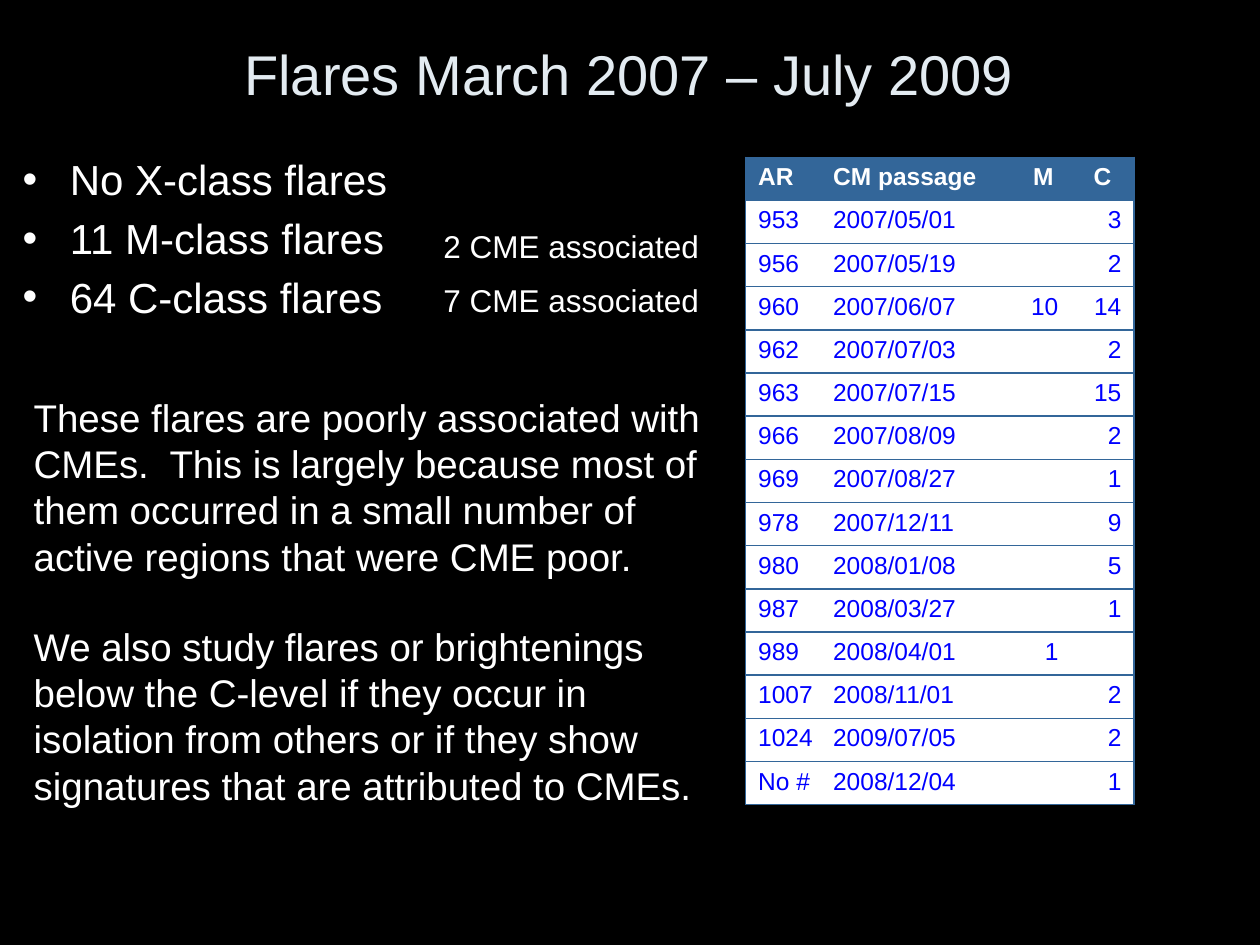
from lxml.etree import SubElement
from pptx import Presentation
from pptx.dml.color import RGBColor
from pptx.enum.text import MSO_ANCHOR as Anchor, MSO_AUTO_SIZE as AutoSize, PP_ALIGN as Align
from pptx.oxml.ns import qn
from pptx.util import Cm, Pt

COLORS = {
    "background": "000000",
    "title": "E3EBF1",
    "text": "FFFFFF",
    "header": "336699",
    "cell": "FFFFFF",
    "data": "0000FF",
}
FONT = "Arial"


def write(paragraph, text, size=18, color="text", bold=False, align=None, before=None):
    """Put formatted text in a paragraph."""
    if align is not None:
        paragraph.alignment = align
    if before is not None:
        paragraph.space_before = Pt(before)
    if not text:
        # An empty cell still needs its text size to keep the row height
        paragraph._p.get_or_add_endParaRPr().set("sz", str(size * 100))
        return
    run = paragraph.add_run()
    run.text = text
    run.font.name = FONT
    run.font.size = Pt(size)
    run.font.bold = bold
    run.font.color.rgb = RGBColor.from_string(COLORS[color])


class SlideBuilder:
    def __init__(self, slide):
        self.slide = slide
        fill = slide.background.fill
        fill.solid()
        fill.fore_color.rgb = RGBColor.from_string(COLORS["background"])

    def fill_frame(self, frame, lines, **style):
        frame.word_wrap = True
        for i, line in enumerate(lines):
            paragraph = frame.add_paragraph() if i else frame.paragraphs[0]
            write(paragraph, line, **style)

    def placeholder(self, index, box, lines, **style):
        holder = self.slide.placeholders[index]
        holder.left, holder.top, holder.width, holder.height = map(Cm, box)
        holder.text_frame.auto_size = AutoSize.NONE
        self.fill_frame(holder.text_frame, lines, **style)

    def text(self, box, lines, anchor=Anchor.TOP, **style):
        frame = self.slide.shapes.add_textbox(*map(Cm, box)).text_frame
        frame.vertical_anchor = anchor
        self.fill_frame(frame, lines, **style)

    def border(self, cell, side, visible):
        line = SubElement(cell._tc.get_or_add_tcPr(), qn(f"a:ln{side}"), w=str(Pt(1)))
        if visible:
            solid = SubElement(line, qn("a:solidFill"))
            SubElement(solid, qn("a:srgbClr"), val=COLORS["header"])
        else:
            SubElement(line, qn("a:noFill"))

    def table(self, left, top, widths, row_height, rows, tab):
        size = sum(widths), row_height * len(rows)
        table = self.slide.shapes.add_table(
            len(rows), len(widths), *map(Cm, (left, top, *size))).table
        for column, width in zip(table.columns, widths):
            column.width = Cm(width)
        last = len(widths) - 1
        for r, values in enumerate(rows):
            table.rows[r].height = Cm(row_height)
            header = r == 0
            for c, value in enumerate(values):
                cell = table.cell(r, c)
                for side, visible in (("L", c == 0), ("R", c == last), ("T", True), ("B", True)):
                    self.border(cell, side, visible)
                cell.fill.solid()
                cell.fill.fore_color.rgb = RGBColor.from_string(
                    COLORS["header" if header else "cell"])
                paragraph = cell.text_frame.paragraphs[0]
                if c == 0:
                    align = Align.LEFT
                    stops = SubElement(paragraph._p.get_or_add_pPr(), qn("a:tabLst"))
                    SubElement(stops, qn("a:tab"), pos=str(Cm(tab)), algn="l")
                else:
                    align = Align.CENTER if header else Align.RIGHT
                write(paragraph, value, size=14, bold=header, align=align,
                      color="text" if header else "data")


FLARES = [
    ("AR", "CM passage", "M", "C"),
    ("953", "2007/05/01", "", "3"),
    ("956", "2007/05/19", "", "2"),
    ("960", "2007/06/07", "10", "14"),
    ("962", "2007/07/03", "", "2"),
    ("963", "2007/07/15", "", "15"),
    ("966", "2007/08/09", "", "2"),
    ("969", "2007/08/27", "", "1"),
    ("978", "2007/12/11", "", "9"),
    ("980", "2008/01/08", "", "5"),
    ("987", "2008/03/27", "", "1"),
    ("989", "2008/04/01", "1", ""),
    ("1007", "2008/11/01", "", "2"),
    ("1024", "2009/07/05", "", "2"),
    ("No #", "2008/12/04", "", "1"),
]
DISCUSSION = [
    "These flares are poorly associated with CMEs.  This is largely because most of "
    "them occurred in a small number of active regions that were CME poor.",
    "We also study flares or brightenings below the C-level if they occur in isolation "
    "from others or if they show signatures that are attributed to CMEs.",
]


def main():
    deck = Presentation()
    deck.slide_width, deck.slide_height = Cm(25.4), Cm(19.05)
    builder = SlideBuilder(deck.slides.add_slide(deck.slide_layouts[1]))

    # Title and flare counts
    builder.placeholder(0, (0.2, 0.2, 24.97, 2.54), ["Flares March 2007 – July 2009"],
                        size=32, color="title", align=Align.CENTER)
    builder.placeholder(1, (0.2, 2.97, 8.69, 4.45),
                        ["No X-class flares", "11 M-class flares", "64 C-class flares"], size=24)

    # Active regions: number and date share the first column
    rows = [(f"{region}\t{passage}", m, c) for region, passage, m, c in FLARES]
    builder.table(15.03, 3.17, (5.44, 1.12, 1.27), 0.87, rows, tab=1.51)

    # Discussion, paragraphs one line apart
    builder.text((0.43, 7.82, 14.4, 8.71), DISCUSSION, size=22, before=25.3)

    # CME counts beside the M and C classes
    builder.text((8.69, 4.45, 5.72, 1.02), ["2 CME associated"])
    builder.text((8.69, 5.54, 5.72, 1.02), ["7 CME associated"], anchor=Anchor.BOTTOM)

    deck.save("out.pptx")


if __name__ == "__main__":
    main()
